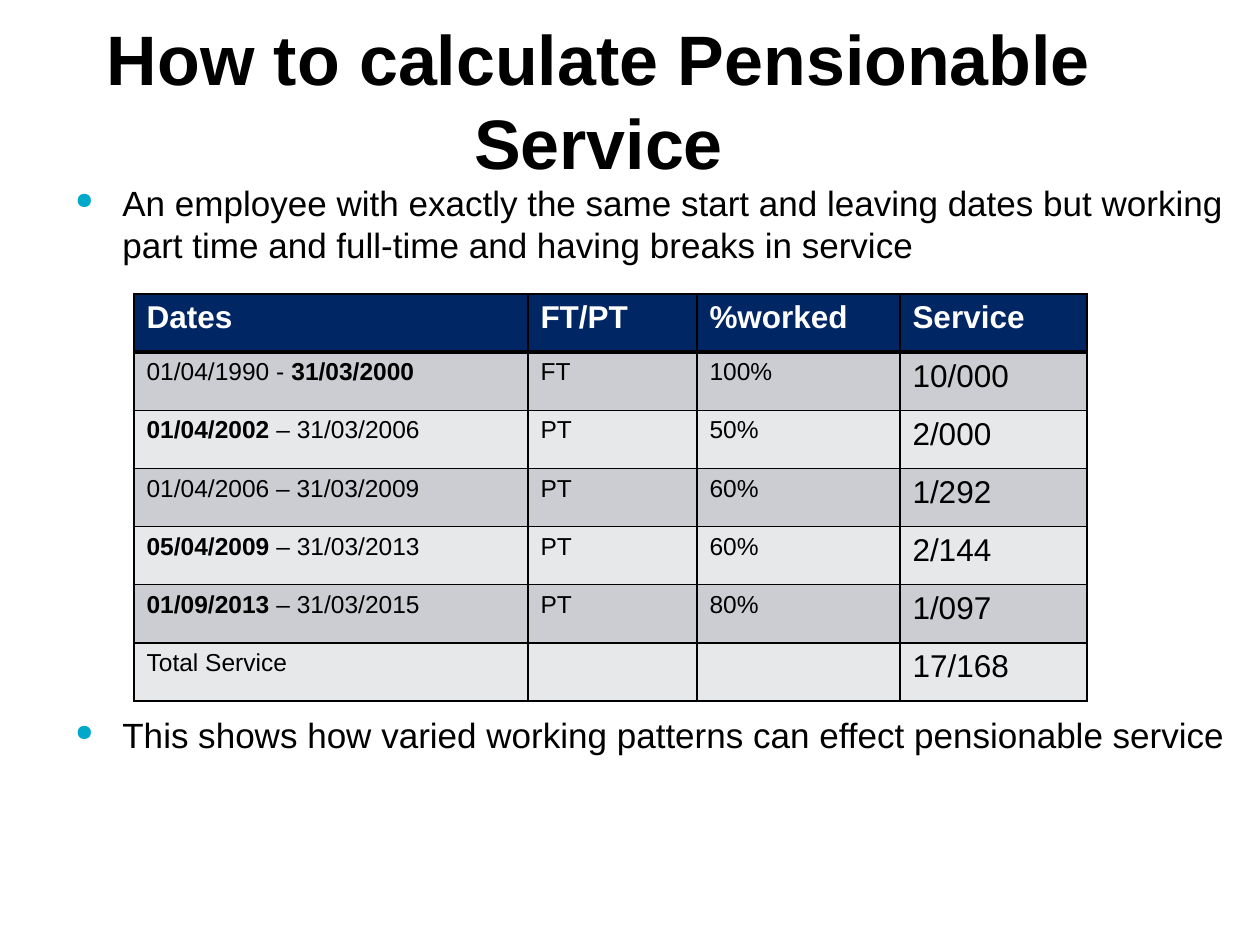
import pptx
import pptx.dml.color
import pptx.enum.text
import pptx.oxml
import pptx.oxml.ns
import pptx.util

RGB = pptx.dml.color.RGBColor
BLACK = RGB(0x00, 0x00, 0x00)
WHITE = RGB(0xFF, 0xFF, 0xFF)
NAVY = RGB(0x00, 0x26, 0x64)
CYAN = RGB(0x00, 0xA8, 0xCA)
GREY = RGB(0xCC, 0xCD, 0xD3)
LIGHT = RGB(0xE7, 0xE8, 0xEA)

BULLETS = [
    "An employee with exactly the same start and leaving dates but working "
    "part time and full-time and having breaks in service",
    "This shows how varied working patterns can effect pensionable service",
]
BULLET_GAP = 256  # points left free for the table

# Text between asterisks is bold
HEADER = ["Dates", "FT/PT", "%worked", "Service"]
ROWS = [
    ["01/04/1990 - *31/03/2000*", "FT", "100%", "10/000"],
    ["*01/04/2002* – 31/03/2006", "PT", "50%", "2/000"],
    ["01/04/2006 – 31/03/2009", "PT", "60%", "1/292"],
    ["*05/04/2009* – 31/03/2013", "PT", "60%", "2/144"],
    ["*01/09/2013* – 31/03/2015", "PT", "80%", "1/097"],
    ["Total Service", "", "", "17/168"],
]
COLUMNS = [394, 169, 203, 187]


def px(n):
    return pptx.util.Emu(round(n * 914400 / 126))


def add_xml(parent, xml):
    ns = pptx.oxml.ns.nsdecls("a")
    parent.append(pptx.oxml.parse_xml(xml.replace(">", f" {ns}>", 1)))


class Deck:
    font = "Arial"

    def __init__(self, width, height):
        self.prs = pptx.Presentation()
        self.prs.slide_width, self.prs.slide_height = px(width), px(height)
        self.slide = None

    def add_slide(self):
        self.slide = self.prs.slides.add_slide(self.prs.slide_layouts[5])

    def style(self, font, size, color=BLACK, bold=False):
        values = {"name": self.font, "size": pptx.util.Pt(size), "bold": bold}
        for key, value in values.items():
            setattr(font, key, value)
        font.color.rgb = color

    def title(self, text, x, y, w, h):
        sp = self.slide.shapes.title
        sp.left, sp.top, sp.width, sp.height = map(px, (x, y, w, h))
        tf = sp.text_frame
        tf.text = text
        tf.auto_size = pptx.enum.text.MSO_AUTO_SIZE.NONE
        tf.vertical_anchor = pptx.enum.text.MSO_ANCHOR.MIDDLE
        p = tf.paragraphs[0]
        p.alignment = pptx.enum.text.PP_ALIGN.CENTER
        self.style(p.runs[0].font, 40, bold=True)

    def bullets(self, items, gap, x, y, w, h):
        tf = self.slide.shapes.add_textbox(*map(px, (x, y, w, h))).text_frame
        tf.word_wrap = True
        for i, item in enumerate(items):
            p = tf.add_paragraph() if i else tf.paragraphs[0]
            if i:
                p.space_before = pptx.util.Pt(gap)
            pPr = p._p.get_or_add_pPr()
            pPr.set("marL", str(px(47)))
            pPr.set("indent", str(-px(47)))
            add_xml(pPr, f'<a:buClr><a:srgbClr val="{CYAN}"/></a:buClr>')
            add_xml(pPr, '<a:buSzPct val="65000"></a:buSzPct>')
            add_xml(pPr, '<a:buChar char="●"></a:buChar>')
            r = p.add_run()
            r.text = item
            self.style(r.font, 20)

    def cell(self, cell, text, fill, size, color=BLACK, bold=False, bottom=1):
        # Borders come before the fill in the cell properties
        tcPr = cell._tc.get_or_add_tcPr()
        for side, width in {"L": 1, "R": 1, "T": 1, "B": bottom}.items():
            add_xml(tcPr, f'<a:ln{side} w="{pptx.util.Pt(width)}"><a:solidFill>'
                          f'<a:srgbClr val="{BLACK}"/></a:solidFill></a:ln{side}>')
        cell.fill.solid()
        cell.fill.fore_color.rgb = fill
        p = cell.text_frame.paragraphs[0]
        for i, part in enumerate(text.split("*")):
            if part:
                r = p.add_run()
                r.text = part
                self.style(r.font, size, color, bold or i % 2 == 1)

    def table(self, header, rows, columns, x, y, h):
        table = self.slide.shapes.add_table(
            len(rows) + 1, len(columns), *map(px, (x, y, sum(columns), h))).table
        for column, width in zip(table.columns, columns):
            column.width = px(width)
        for c, text in enumerate(header):
            self.cell(table.cell(0, c), text, NAVY, 18, WHITE, True, bottom=3)
        for r, row in enumerate(rows, 1):
            for c, text in enumerate(row):
                self.cell(table.cell(r, c), text, GREY if r % 2 else LIGHT,
                          18 if c == len(row) - 1 else 14,)
        # The first body row shares the thick line under the header
        for c in range(len(columns)):
            line = table.cell(1, c)._tc.tcPr.find(pptx.oxml.ns.qn("a:lnT"))
            line.set("w", str(pptx.util.Pt(3)))


def main():
    deck = Deck(1260, 945)
    deck.add_slide()
    deck.title("How to calculate Pensionable Service", 63, 21, 1071, 158)
    deck.bullets(BULLETS, BULLET_GAP, 63, 175, 1176, 625)
    deck.table(HEADER, ROWS, COLUMNS, 134, 294, 407)
    deck.prs.save("out.pptx")


if __name__ == "__main__":
    main()
